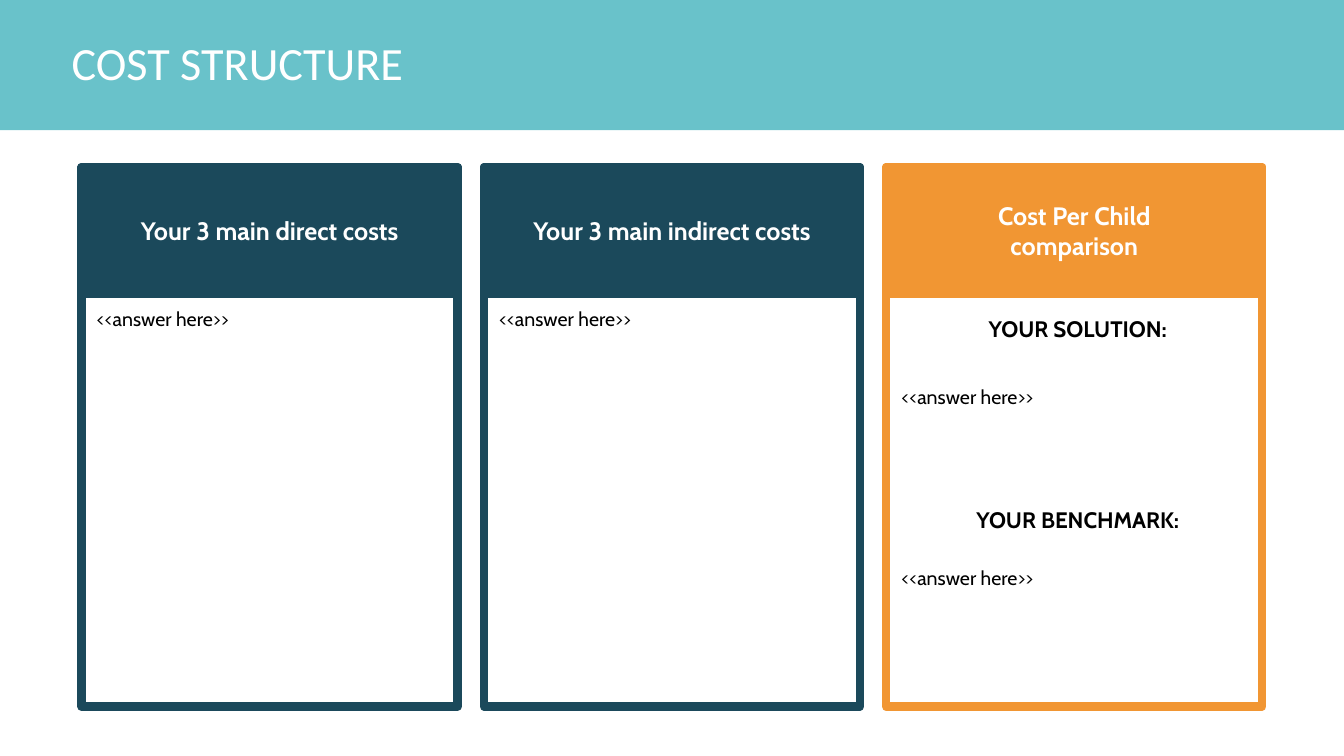
from dataclasses import dataclass
from pptx import Presentation
from pptx.dml.color import RGBColor
from pptx.enum.shapes import MSO_SHAPE
from pptx.enum.text import MSO_ANCHOR, PP_ALIGN
from pptx.util import Inches, Pt


@dataclass(frozen=True)
class Theme:
    band: RGBColor = RGBColor(0x69, 0xC2, 0xCA)
    navy: RGBColor = RGBColor(0x1B, 0x49, 0x5B)
    orange: RGBColor = RGBColor(0xF1, 0x96, 0x33)
    white: RGBColor = RGBColor(0xFF, 0xFF, 0xFF)
    black: RGBColor = RGBColor(0, 0, 0)
    head: str = "Calibri"
    body: str = "Cabin"
    title: int = 33
    card: int = 18
    label: int = 16
    answer: int = 14
    border: int = 6


theme = Theme()
deck = Presentation()
deck.slide_width, deck.slide_height = Inches(13.33), Inches(7.5)
slide = deck.slides.add_slide(deck.slide_layouts[5])
shapes = slide.shapes


def block(x, y, w, h, fill=None, line=None):
    rect = shapes.add_shape(MSO_SHAPE.RECTANGLE, Inches(x), Inches(y), Inches(w), Inches(h))
    rect.shadow.inherit = False
    if fill is None:
        rect.fill.background()
    else:
        rect.fill.solid()
        rect.fill.fore_color.rgb = fill
    if line is None:
        rect.line.fill.background()
    else:
        rect.line.color.rgb = line
        rect.line.width = Pt(theme.border)
    return rect


def write(shape, lines, size, color, font=theme.body, bold=False,
          align=PP_ALIGN.LEFT, anchor=MSO_ANCHOR.TOP, space=0.9):
    """Fill a shape with one formatted paragraph per line."""
    frame = shape.text_frame
    frame.word_wrap = True
    frame.vertical_anchor = anchor
    frame.margin_left = frame.margin_right = Inches(0.05)
    frame.margin_top = frame.margin_bottom = Inches(0.05)
    for i, line in enumerate(lines):
        para = frame.paragraphs[0] if i == 0 else frame.add_paragraph()
        para.alignment = align
        para.line_spacing = space
        para.space_before = Pt(0)
        run = para.add_run()
        run.text = line
        run.font.name = font
        run.font.size = Pt(size)
        run.font.bold = bold
        run.font.color.rgb = color


# Title on its band
title = shapes.title
title.left, title.top = Inches(0.66), Inches(0.32)
title.width, title.height = Inches(8.91), Inches(0.66)
write(title, ["COST STRUCTURE"], theme.title, theme.white, theme.head,
      anchor=MSO_ANCHOR.MIDDLE)
band = block(0, 0, 13.33, 1.29, theme.band)
title.element.addprevious(band.element)

# Three cards: header, colour, then (text, top, height, is label)
left, top, width, pitch = 0.81, 1.66, 3.73, 3.99
tall, cap = 5.35, 1.26
inset, inner = 0.1, 3.54
answer = "<<answer here>>"
cards = [
    (["Your 3 main direct costs"], theme.navy, [(answer, 3.02, 3.93, False)]),
    (["Your 3 main indirect costs"], theme.navy, [(answer, 3.02, 3.93, False)]),
    (["Cost Per Child", "comparison"], theme.orange, [
        ("YOUR SOLUTION:", 3.11, 0.66, True),
        (answer, 3.8, 1.14, False),
        ("YOUR BENCHMARK:", 5, 0.66, True),
        (answer, 5.59, 1.29, False),
    ]),
]
for col, (head, color, items) in enumerate(cards):
    x = left + col * pitch
    block(x, top, width, tall, line=color)
    write(block(x, top, width, cap, color, color), head, theme.card, theme.white,
          bold=True, align=PP_ALIGN.CENTER, anchor=MSO_ANCHOR.MIDDLE, space=1.0)
    for text, y, high, label in items:
        shift = inset + (0.03 if label else 0)
        box = shapes.add_textbox(Inches(x + shift), Inches(y), Inches(inner), Inches(high))
        write(box, [text], theme.label if label else theme.answer, theme.black,
              bold=label, align=PP_ALIGN.CENTER if label else PP_ALIGN.LEFT)

deck.save("out.pptx")
